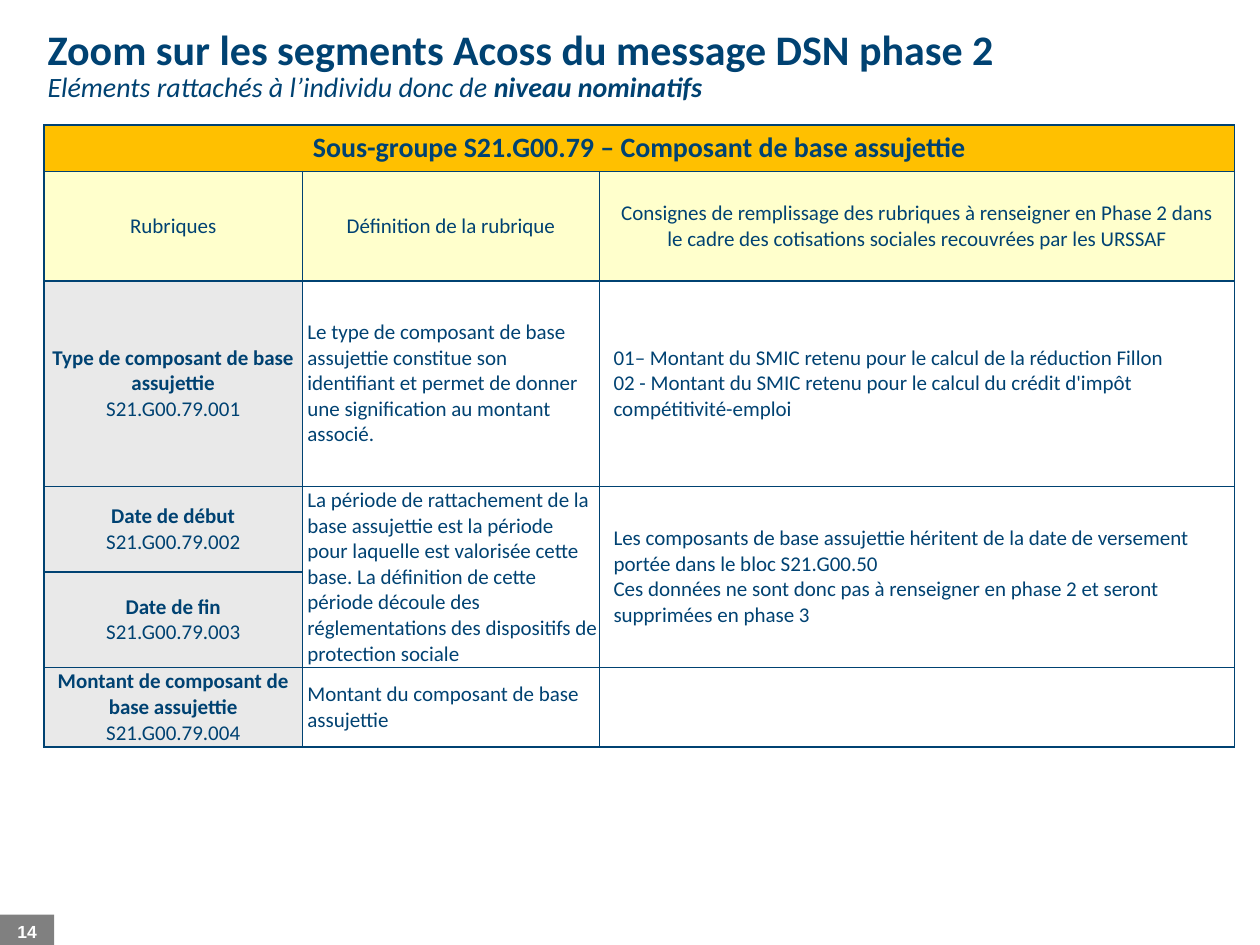
from dataclasses import dataclass

from lxml import etree
from pptx import Presentation
from pptx.dml.color import RGBColor
from pptx.enum import shapes, text
from pptx.oxml import ns
from pptx.util import Inches, Pt

NAVY = RGBColor(0x00, 0x42, 0x72)
AMBER = RGBColor(0xFF, 0xC0, 0x00)
CREAM = RGBColor(0xFF, 0xFF, 0xCC)
LIGHT_GRAY = RGBColor(0xE9, 0xE9, 0xE9)
GRAY = RGBColor(0x80, 0x80, 0x80)
WHITE = RGBColor(0xFF, 0xFF, 0xFF)

LEFT, CENTER = text.PP_ALIGN.LEFT, text.PP_ALIGN.CENTER
COLUMN_WIDTHS = (2.05, 2.36, 5.04)
ROW_HEIGHTS = (0.37, 0.87, 1.63, 0.68, 0.76, 0.63)


@dataclass(frozen=True)
class Run:
    content: str
    size: float = 12
    bold: bool = False
    italic: bool = False
    color: RGBColor = NAVY
    font: str = "Calibri"


@dataclass(frozen=True)
class CellStyle:
    fill: RGBColor
    align: text.PP_ALIGN = LEFT
    margins: tuple[float, float, float, float] = (0.01, 0.01, 0.01, 0.01)
    indent: float = 0


HEADER_MARGINS = (0.1, 0.05, 0.1, 0.05)
BANNER = CellStyle(AMBER, CENTER, HEADER_MARGINS)
HEADING = CellStyle(CREAM, CENTER, HEADER_MARGINS)
RUBRIC = CellStyle(LIGHT_GRAY, CENTER)
DEFINITION = CellStyle(WHITE, margins=(0.04, 0.01, 0.01, 0.01))
INSTRUCTION = CellStyle(WHITE, indent=0.1)


@dataclass(frozen=True)
class CellContent:
    row: int
    column: int
    style: CellStyle
    paragraphs: tuple[Run, ...]


def rubric(row: int, name: str, code: str) -> CellContent:
    return CellContent(row, 0, RUBRIC, (Run(name, bold=True), Run(code)))


def plain(row: int, column: int, style: CellStyle, *lines: str) -> CellContent:
    return CellContent(row, column, style, tuple(Run(line) for line in lines))


CELLS = (
    CellContent(0, 0, BANNER, (
        Run("Sous-groupe S21.G00.79 – Composant de base assujettie", 16, bold=True),)),
    plain(1, 0, HEADING, "Rubriques"),
    plain(1, 1, HEADING, "Définition de la rubrique"),
    plain(1, 2, HEADING,
          "Consignes de remplissage des rubriques à renseigner en Phase 2 dans "
          "le cadre des cotisations sociales recouvrées par les URSSAF"),
    rubric(2, "Type de composant de base assujettie", "S21.G00.79.001"),
    plain(2, 1, DEFINITION,
          "Le type de composant de base assujettie constitue son identifiant et "
          "permet de donner une signification au montant associé."),
    plain(2, 2, INSTRUCTION,
          "01– Montant du SMIC retenu pour le calcul de la réduction Fillon",
          "02 - Montant du SMIC retenu pour le calcul du crédit d'impôt "
          "compétitivité-emploi"),
    rubric(3, "Date de début", "S21.G00.79.002"),
    plain(3, 1, DEFINITION,
          "La période de rattachement de la base assujettie est la période pour "
          "laquelle est valorisée cette base. La définition de cette période "
          "découle des réglementations des dispositifs de protection sociale"),
    plain(3, 2, INSTRUCTION,
          "Les composants de base assujettie héritent de la date de versement "
          "portée dans le bloc S21.G00.50",
          "Ces données ne sont donc pas à renseigner en phase 2 et seront "
          "supprimées en phase 3"),
    rubric(4, "Date de fin", "S21.G00.79.003"),
    rubric(5, "Montant de composant de base assujettie", "S21.G00.79.004"),
    plain(5, 1, DEFINITION, "Montant du composant de base assujettie"),
)

TITLE_LINES = (
    (Run("Zoom sur les segments Acoss du message DSN phase 2", 24, bold=True),),
    (Run("Eléments rattachés à l’individu donc de ", 16, italic=True),
     Run("niveau nominatifs", 16, bold=True, italic=True)),
)


def add_run(paragraph, item: Run) -> None:
    run = paragraph.add_run()
    run.text = item.content
    run.font.name = item.font
    run.font.size = Pt(item.size)
    run.font.bold = item.bold
    run.font.italic = item.italic
    run.font.color.rgb = item.color


def paragraph_at(frame, index: int):
    return frame.paragraphs[0] if index == 0 else frame.add_paragraph()


def set_margins(holder, margins: tuple[float, float, float, float]) -> None:
    (holder.margin_left, holder.margin_top,
     holder.margin_right, holder.margin_bottom) = map(Inches, margins)


def add_borders(cell) -> None:
    properties = cell._tc.get_or_add_tcPr()
    for side in ("lnL", "lnR", "lnT", "lnB"):
        line = etree.SubElement(properties, ns.qn(f"a:{side}"), w=str(Pt(1)))
        fill = etree.SubElement(line, ns.qn("a:solidFill"))
        etree.SubElement(fill, ns.qn("a:srgbClr"), val=str(NAVY))


def fill_cell(cell, content: CellContent) -> None:
    style = content.style
    cell.fill.solid()
    cell.fill.fore_color.rgb = style.fill
    cell.vertical_anchor = text.MSO_ANCHOR.MIDDLE
    set_margins(cell, style.margins)
    for index, item in enumerate(content.paragraphs):
        paragraph = paragraph_at(cell.text_frame, index)
        paragraph.alignment = style.align
        if style.indent:
            paragraph._p.get_or_add_pPr().set("marL", str(Inches(style.indent)))
        add_run(paragraph, item)


def add_title(slide) -> None:
    box = slide.shapes.add_textbox(Inches(0.28), Inches(0.2), Inches(8.9), Inches(0.64))
    frame = box.text_frame
    frame.word_wrap = True
    for index, runs in enumerate(TITLE_LINES):
        paragraph = paragraph_at(frame, index)
        paragraph.line_spacing = 0.85
        for item in runs:
            add_run(paragraph, item)


def add_rubric_table(slide) -> None:
    table = slide.shapes.add_table(
        len(ROW_HEIGHTS), len(COLUMN_WIDTHS), Inches(0.35), Inches(0.99),
        Inches(sum(COLUMN_WIDTHS)), Inches(sum(ROW_HEIGHTS))).table
    table.first_row = table.horz_banding = False
    for column, width in zip(table.columns, COLUMN_WIDTHS):
        column.width = Inches(width)
    for row, height in zip(table.rows, ROW_HEIGHTS):
        row.height = Inches(height)
    for cell in table.iter_cells():
        add_borders(cell)
        cell.fill.solid()
        cell.fill.fore_color.rgb = WHITE
    table.cell(0, 0).merge(table.cell(0, 2))
    for column in (1, 2):
        table.cell(3, column).merge(table.cell(4, column))
    for content in CELLS:
        fill_cell(table.cell(content.row, content.column), content)


def add_page_number(slide) -> None:
    shape = slide.shapes.add_shape(
        shapes.MSO_SHAPE.RECTANGLE, Inches(0), Inches(7.26), Inches(0.43), Inches(0.27))
    shape.shadow.inherit = False
    shape.fill.solid()
    shape.fill.fore_color.rgb = GRAY
    shape.line.fill.background()
    frame = shape.text_frame
    frame.word_wrap = True
    frame.vertical_anchor = text.MSO_ANCHOR.MIDDLE
    set_margins(frame, (0.02, 0.05, 0.02, 0.05))
    frame.paragraphs[0].alignment = CENTER
    add_run(frame.paragraphs[0], Run("14", 10, bold=True, color=WHITE, font="Arial"))


def main() -> None:
    presentation = Presentation()
    presentation.slide_width, presentation.slide_height = Inches(10), Inches(7.5)
    slide = presentation.slides.add_slide(presentation.slide_layouts[6])
    add_page_number(slide)
    add_title(slide)
    add_rubric_table(slide)
    presentation.save("out.pptx")


if __name__ == "__main__":
    main()
